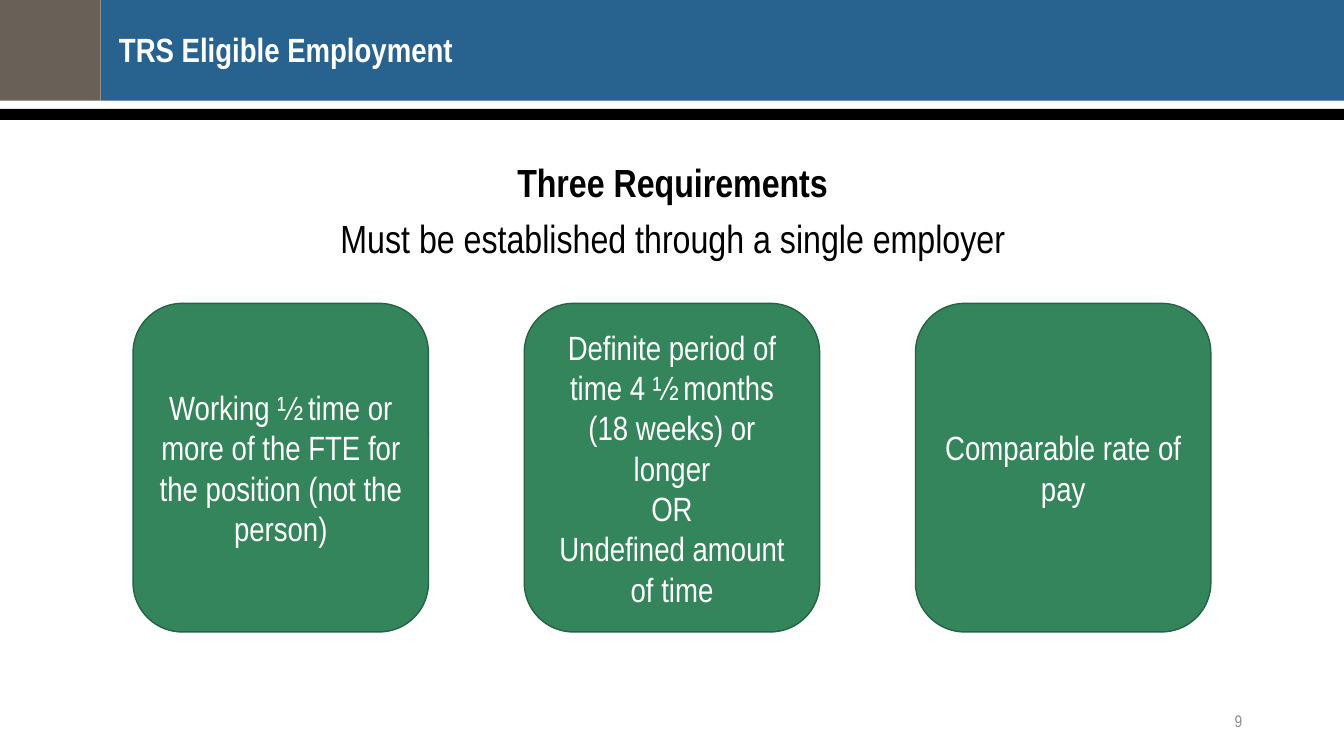
from dataclasses import dataclass

import pptx
import pptx.dml.color
import pptx.enum.shapes
import pptx.enum.text
import pptx.shapes.autoshape
import pptx.slide
import pptx.text.text
import pptx.util

Inches = pptx.util.Inches
Pt = pptx.util.Pt
ALIGN = pptx.enum.text.PP_ALIGN
ANCHOR = pptx.enum.text.MSO_ANCHOR
SHAPE = pptx.enum.shapes.MSO_SHAPE

FONT = "Arial Narrow"
COLORS = {
    "blue": "28628E",
    "brown": "696057",
    "black": "000000",
    "white": "FFFFFF",
    "gray": "8C8C8C",
    "green": "34855B",
    "dark_green": "266243",
}


@dataclass
class Box:
    left: float
    top: float
    width: float
    height: float


@dataclass
class Band:
    box: Box
    color: str


@dataclass
class TextStyle:
    size: float
    color: str
    align: ALIGN
    bold: bool = False
    line_spacing: float = 1.0
    gap: float = 0


BANDS = [
    Band(Box(1, 0, 12.33, 1), "blue"),
    Band(Box(0, 0, 1, 1), "brown"),
    Band(Box(0, 1.08, 13.33, 0.11), "black"),
]
REQUIREMENTS = [
    ["Working ½ time or more of the FTE for the position (not the person)"],
    [
        "Definite period of time 4 ½ months (18 weeks) or longer",
        "OR",
        "Undefined amount of time",
    ],
    ["Comparable rate of pay"],
]
CARD = Box(1.32, 3.01, 2.93, 3.26)
CARD_PITCH = 3.88


def rgb(name: str) -> pptx.dml.color.RGBColor:
    return pptx.dml.color.RGBColor.from_string(COLORS[name])


def lengths(box: Box) -> list[int]:
    return [Inches(v) for v in (box.left, box.top, box.width, box.height)]


def write(tf: pptx.text.text.TextFrame, lines: list[str], style: TextStyle,
          anchor: ANCHOR = ANCHOR.MIDDLE) -> None:
    """Fill a text frame with one paragraph per line in a shared style."""
    tf.word_wrap = True
    tf.auto_size = pptx.enum.text.MSO_AUTO_SIZE.NONE
    tf.vertical_anchor = anchor
    for i, line in enumerate(lines):
        p = tf.add_paragraph() if i else tf.paragraphs[0]
        p.text = line
        p.alignment = style.align
        p.line_spacing = style.line_spacing
        p.space_before = Pt(style.gap if i else 0)
        p.font.name = FONT
        p.font.size = Pt(style.size)
        p.font.bold = style.bold
        p.font.color.rgb = rgb(style.color)


def clear_margins(tf: pptx.text.text.TextFrame) -> None:
    tf.margin_left = tf.margin_top = tf.margin_right = tf.margin_bottom = 0


def add_filled(s: pptx.slide.Slide, kind: SHAPE, box: Box,
               color: str) -> pptx.shapes.autoshape.Shape:
    sp = s.shapes.add_shape(kind, *lengths(box))
    sp.shadow.inherit = False
    sp.fill.solid()
    sp.fill.fore_color.rgb = rgb(color)
    sp.line.fill.background()
    return sp


def add_title(s: pptx.slide.Slide) -> None:
    title = s.shapes.title
    title.left, title.top, title.width, title.height = lengths(
        Box(1.18, 0.33, 11.23, 0.56))
    clear_margins(title.text_frame)
    write(title.text_frame, ["TRS Eligible Employment"],
          TextStyle(24, "white", ALIGN.LEFT, True, 0.9), ANCHOR.TOP)
    # Bring the title in front of the header bands
    s.shapes._spTree.append(title._element)


def add_intro(s: pptx.slide.Slide) -> None:
    tf = s.shapes.add_textbox(*lengths(Box(0.92, 1.62, 11.5, 1.1))).text_frame
    clear_margins(tf)
    write(tf, ["Three Requirements",
               "Must be established through a single employer"],
          TextStyle(28, "black", ALIGN.CENTER, line_spacing=0.9, gap=10),
          ANCHOR.TOP)
    tf.paragraphs[0].font.bold = True


def add_card(s: pptx.slide.Slide, column: int, lines: list[str]) -> None:
    box = Box(CARD.left + column * CARD_PITCH, CARD.top, CARD.width, CARD.height)
    sp = add_filled(s, SHAPE.ROUNDED_RECTANGLE, box, "green")
    sp.line.color.rgb = rgb("dark_green")
    sp.line.width = Pt(1)
    write(sp.text_frame, lines, TextStyle(24, "white", ALIGN.CENTER))


def main() -> None:
    prs = pptx.Presentation()
    prs.slide_width, prs.slide_height = Inches(13.33), Inches(7.5)
    s = prs.slides.add_slide(prs.slide_layouts.get_by_name("Title Only"))
    for band in BANDS:
        add_filled(s, SHAPE.RECTANGLE, band.box, band.color)
    add_title(s)
    add_intro(s)
    number = s.shapes.add_textbox(*lengths(Box(9.42, 6.95, 3, 0.4)))
    write(number.text_frame, ["9"], TextStyle(12, "gray", ALIGN.RIGHT))
    for column, lines in enumerate(REQUIREMENTS):
        add_card(s, column, lines)
    prs.save("out.pptx")


if __name__ == "__main__":
    main()
